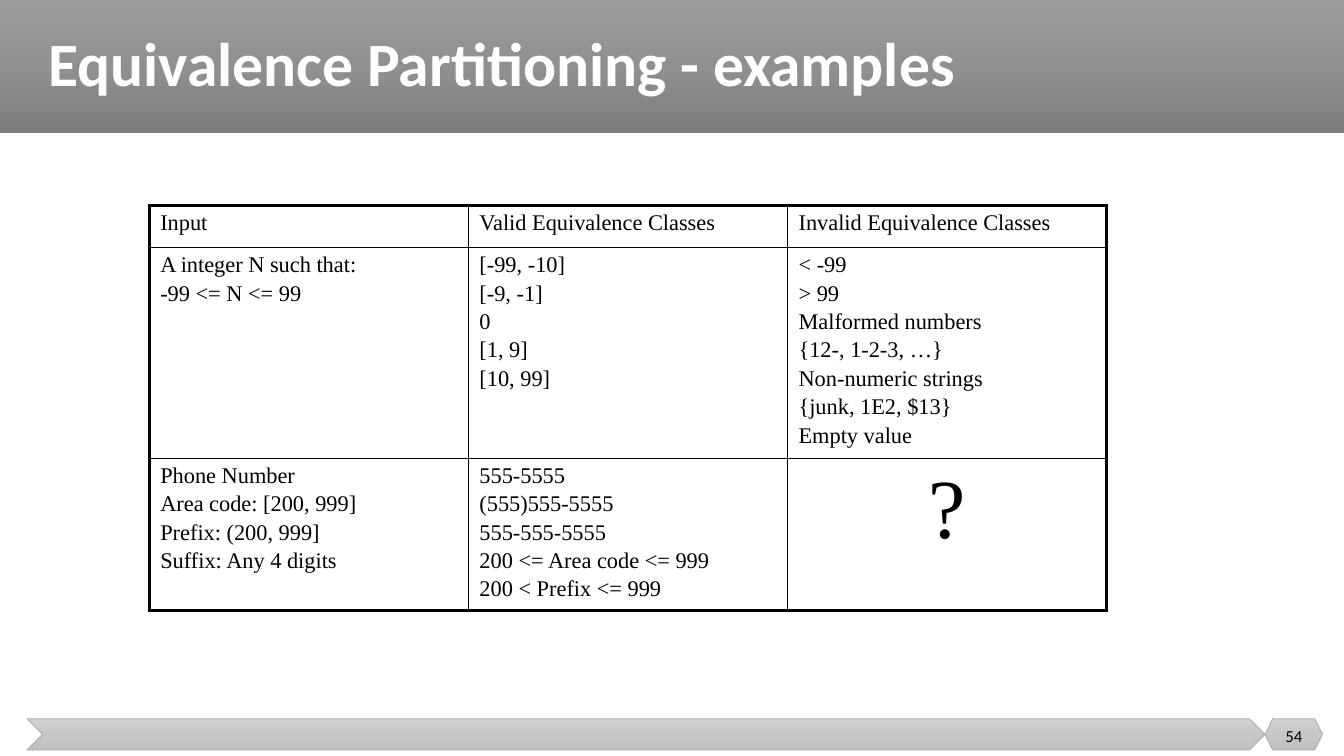
from copy import deepcopy
from dataclasses import dataclass

from lxml.etree import SubElement
from pptx import Presentation
from pptx.dml.color import RGBColor
from pptx.enum.shapes import MSO_SHAPE
from pptx.enum.text import MSO_ANCHOR, PP_ALIGN
from pptx.oxml.ns import qn
from pptx.util import Cm, Pt


@dataclass(frozen=True)
class Theme:
    heading_font: str = "Calibri"
    table_font: str = "Times New Roman"
    white: str = "FFFFFF"
    black: str = "000000"
    outline: str = "A5A5A5"
    header_gradient: tuple = ("9D9D9D", "909090", "7C7C7C")
    footer_gradient: tuple = ("D2D2D2", "C8C8C8", "C0C0C0")
    title_size: int = 44
    table_size: int = 16
    question_size: int = 60
    number_size: int = 12
    outer_border: float = 2.25
    inner_border: float = 1


@dataclass(frozen=True)
class Box:
    left: float
    top: float
    width: float
    height: float

    def lengths(self):
        return Cm(self.left), Cm(self.top), Cm(self.width), Cm(self.height)


THEME = Theme()
SLIDE_WIDTH, SLIDE_HEIGHT = 33.87, 19.05
ROW_HEIGHTS = (1.06, 5.31, 3.83)
CLASSES = (
    (("Input",), ("Valid Equivalence Classes",), ("Invalid Equivalence Classes",)),
    (
        ("A integer N such that:", "-99 <= N <= 99"),
        ("[-99, -10]", "[-9, -1]", "0", "[1, 9]", "[10, 99]"),
        ("< -99", "> 99", "Malformed numbers", "{12-, 1-2-3, …}",
         "Non-numeric strings", "{junk, 1E2, $13}", "Empty value"),
    ),
    (
        ("Phone Number", "Area code: [200, 999]", "Prefix: (200, 999]",
         "Suffix: Any 4 digits"),
        ("555-5555", "(555)555-5555", "555-555-5555",
         "200 <= Area code <= 999", "200 < Prefix <= 999"),
        ("?",),
    ),
)


def format_runs(paragraph, font_name, size, color, bold=False):
    for run in paragraph.runs:
        run.font.name = font_name
        run.font.size = Pt(size)
        run.font.bold = bold
        run.font.color.rgb = RGBColor.from_string(color)


def add_gradient_shape(slide, preset, box, colors, outline=None):
    shape = slide.shapes.add_shape(preset, *box.lengths())
    shape.shadow.inherit = False
    shape.fill.gradient()
    first_stop = next(shape._element.spPr.iter(qn("a:gs")))
    first_stop.addnext(deepcopy(first_stop))
    for index, (stop, color) in enumerate(zip(shape.fill.gradient_stops, colors)):
        stop.position = index / (len(colors) - 1)
        stop.color.rgb = RGBColor.from_string(color)
    shape.fill.gradient_angle = 270
    if outline:
        shape.line.color.rgb = RGBColor.from_string(outline)
        shape.line.width = Pt(0.5)
    else:
        shape.line.fill.background()


def add_header(slide, box):
    add_gradient_shape(slide, MSO_SHAPE.RECTANGLE, box, THEME.header_gradient)
    title = slide.shapes.title
    slide.shapes._spTree.append(title._element)
    title.left, title.top, title.width, title.height = Box(
        box.left + 0.97, box.top, box.width - 1.5, box.height).lengths()
    text_frame = title.text_frame
    text_frame.text = "Equivalence Partitioning - examples"
    text_frame.vertical_anchor = MSO_ANCHOR.MIDDLE
    paragraph = text_frame.paragraphs[0]
    paragraph.alignment = PP_ALIGN.LEFT
    paragraph.line_spacing = 0.9
    format_runs(paragraph, THEME.heading_font, THEME.title_size, THEME.white, True)


def set_borders(cell, widths):
    properties = cell._tc.get_or_add_tcPr()
    for side, width in widths.items():
        line = SubElement(properties, qn(f"a:ln{side}"), w=str(Pt(width)))
        fill = SubElement(line, qn("a:solidFill"))
        SubElement(fill, qn("a:srgbClr"), val=THEME.black)


def fill_cell(cell, lines):
    cell.margin_left = cell.margin_right = Cm(0.28)
    cell.margin_top = cell.margin_bottom = Cm(0.13)
    cell.text_frame.text = "\n".join(lines)
    is_question = lines == ("?",)
    size = THEME.question_size if is_question else THEME.table_size
    for index, paragraph in enumerate(cell.text_frame.paragraphs):
        paragraph.alignment = PP_ALIGN.CENTER if is_question else PP_ALIGN.LEFT
        paragraph.space_before = Pt(2.5 if index else 0)
        format_runs(paragraph, THEME.table_font, size, THEME.black)


def add_class_table(slide, box):
    row_count, column_count = len(CLASSES), len(CLASSES[0])
    table = slide.shapes.add_table(row_count, column_count, *box.lengths()).table
    table.first_row = table.horz_banding = False
    for column in table.columns:
        column.width = Cm(box.width / column_count)
    for row, height in zip(table.rows, ROW_HEIGHTS):
        row.height = Cm(height)
    for row_index, row in enumerate(CLASSES):
        for column_index, lines in enumerate(row):
            cell = table.cell(row_index, column_index)
            on_edge = {
                "L": column_index == 0,
                "R": column_index == column_count - 1,
                "T": row_index == 0,
                "B": row_index == row_count - 1,
            }
            set_borders(cell, {
                side: THEME.outer_border if outer else THEME.inner_border
                for side, outer in on_edge.items()
            })
            cell.fill.background()
            fill_cell(cell, lines)


def add_footer(slide, box):
    number_width = 1.45
    arrow_width = box.width - number_width
    arrow = Box(box.left, box.top, arrow_width, box.height)
    badge = Box(box.left + arrow_width, box.top, number_width, box.height)
    for preset, part in ((MSO_SHAPE.CHEVRON, arrow), (MSO_SHAPE.HEXAGON, badge)):
        add_gradient_shape(slide, preset, part, THEME.footer_gradient, THEME.outline)
    number_box = Box(badge.left, badge.top - 0.08, badge.width, 1.02)
    text_frame = slide.shapes.add_textbox(*number_box.lengths()).text_frame
    text_frame.word_wrap = True
    text_frame.vertical_anchor = MSO_ANCHOR.MIDDLE
    text_frame.text = "54"
    paragraph = text_frame.paragraphs[0]
    paragraph.alignment = PP_ALIGN.CENTER
    format_runs(paragraph, THEME.heading_font, THEME.number_size, THEME.black)


def main():
    presentation = Presentation()
    presentation.slide_width = Cm(SLIDE_WIDTH)
    presentation.slide_height = Cm(SLIDE_HEIGHT)
    slide = presentation.slides.add_slide(presentation.slide_layouts[5])
    add_header(slide, Box(0, 0, SLIDE_WIDTH, 3.35))
    add_class_table(slide, Box(3.76, 5.18, 24.13, sum(ROW_HEIGHTS)))
    add_footer(slide, Box(0.68, 18.11, 32.65, 0.79))
    presentation.save("out.pptx")


if __name__ == "__main__":
    main()
